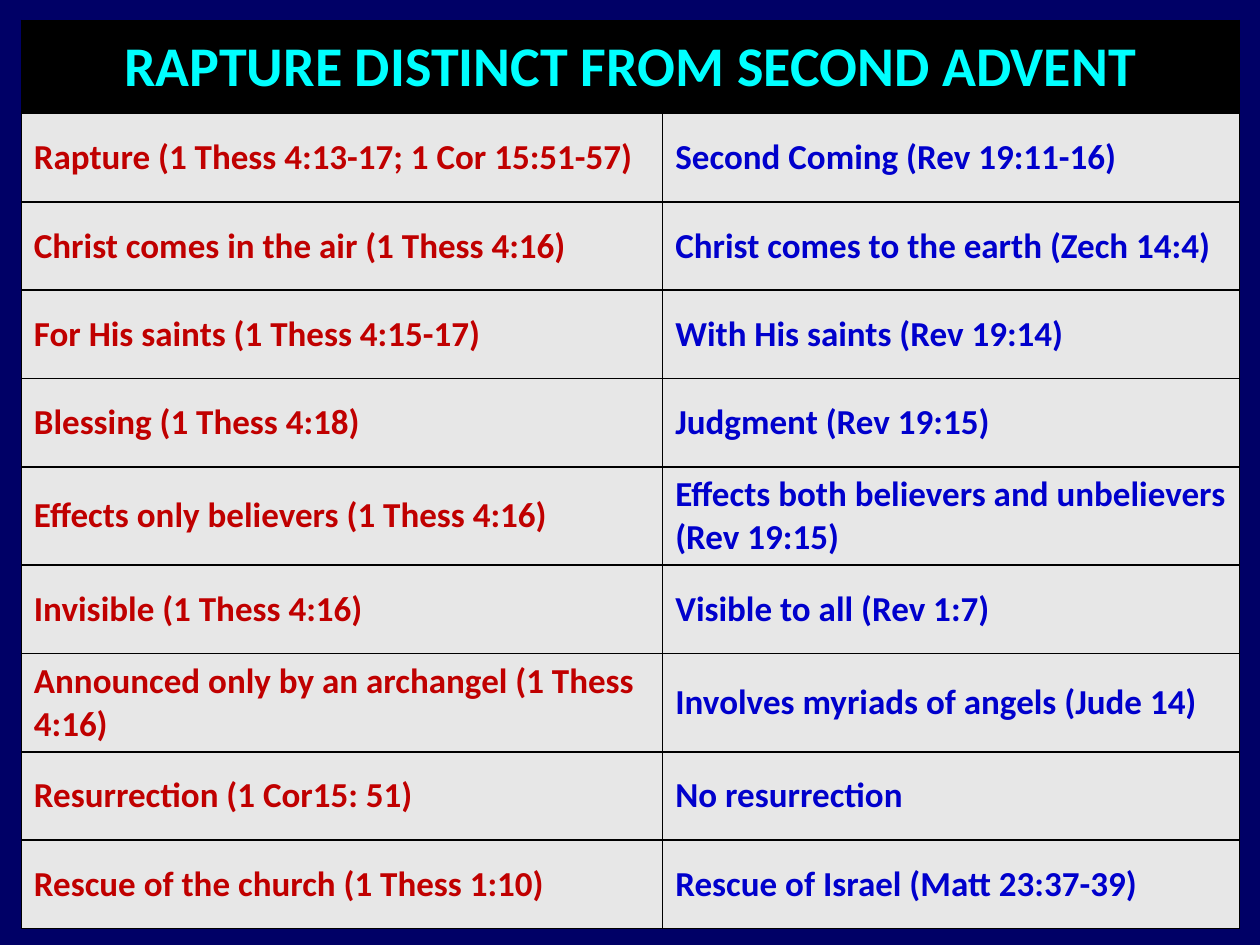
from lxml.etree import SubElement
from pptx import Presentation
from pptx.dml.color import RGBColor
from pptx.enum.text import MSO_ANCHOR, PP_ALIGN
from pptx.oxml.ns import qn
from pptx.util import Cm, Pt

# Content
TITLE = "RAPTURE DISTINCT FROM SECOND ADVENT"
COMPARISONS = [
    ("Rapture (1 Thess 4:13-17; 1 Cor 15:51-57)", "Second Coming (Rev 19:11-16)"),
    ("Christ comes in the air (1 Thess 4:16)", "Christ comes to the earth (Zech 14:4)"),
    ("For His saints (1 Thess 4:15-17)", "With His saints (Rev 19:14)"),
    ("Blessing (1 Thess 4:18)", "Judgment (Rev 19:15)"),
    ("Effects only believers (1 Thess 4:16)",
     "Effects both believers and unbelievers (Rev 19:15)"),
    ("Invisible (1 Thess 4:16)", "Visible to all (Rev 1:7)"),
    ("Announced only by an archangel (1 Thess 4:16)",
     "Involves myriads of angels (Jude 14)"),
    ("Resurrection (1 Cor15: 51)", "No resurrection"),
    ("Rescue of the church (1 Thess 1:10)", "Rescue of Israel (Matt 23:37-39)"),
]

# Style and measures in centimetres
FONT = "Calibri"
NAVY, BLACK, GREY, CYAN = "000066", "000000", "E7E7E7", "00FFFF"
COLUMN_COLORS = ("C00000", "0000CC")
COLUMN_WIDTHS = (12.93, 11.63)
TITLE_HEIGHT, ROW_HEIGHT = 1.88, 1.78
LEFT, TOP = 0.43, 0.41


def fill_with(fill, color):
    fill.solid()
    fill.fore_color.rgb = RGBColor.from_string(color)


def add_borders(cell, color=BLACK, width=Pt(1)):
    properties = cell._tc.get_or_add_tcPr()
    for position, side in enumerate(("lnL", "lnR", "lnT", "lnB")):
        line = properties.makeelement(qn(f"a:{side}"), {"w": str(width)})
        solid = SubElement(line, qn("a:solidFill"))
        SubElement(solid, qn("a:srgbClr"), val=color)
        properties.insert(position, line)  # borders come before the fill


def write_cell(cell, text, size, color, background, alignment=PP_ALIGN.LEFT):
    fill_with(cell.fill, background)
    cell.vertical_anchor = MSO_ANCHOR.MIDDLE
    paragraph = cell.text_frame.paragraphs[0]
    paragraph.alignment = alignment
    run = paragraph.add_run()
    run.text = text
    run.font.name = FONT
    run.font.size = Pt(size)
    run.font.bold = True
    run.font.color.rgb = RGBColor.from_string(color)


# Slide
presentation = Presentation()
presentation.slide_width, presentation.slide_height = Cm(25.4), Cm(19.05)
slide = presentation.slides.add_slide(presentation.slide_layouts[6])
fill_with(slide.background.fill, NAVY)

# Table grid
row_heights = [TITLE_HEIGHT] + [ROW_HEIGHT] * len(COMPARISONS)
table = slide.shapes.add_table(
    len(row_heights), len(COLUMN_WIDTHS), Cm(LEFT), Cm(TOP),
    Cm(sum(COLUMN_WIDTHS)), Cm(sum(row_heights))).table
for column, width in zip(table.columns, COLUMN_WIDTHS):
    column.width = Cm(width)
for row, height in zip(table.rows, row_heights):
    row.height = Cm(height)

# Title row across both columns
table.cell(0, 0).merge(table.cell(0, 1))
write_cell(table.cell(0, 0), TITLE, 32, CYAN, BLACK, PP_ALIGN.CENTER)

# Comparison rows
for row_index, texts in enumerate(COMPARISONS, start=1):
    for column_index, (text, color) in enumerate(zip(texts, COLUMN_COLORS)):
        write_cell(table.cell(row_index, column_index), text, 20, color, GREY)

for cell in table.iter_cells():
    add_borders(cell)

presentation.save("out.pptx")
